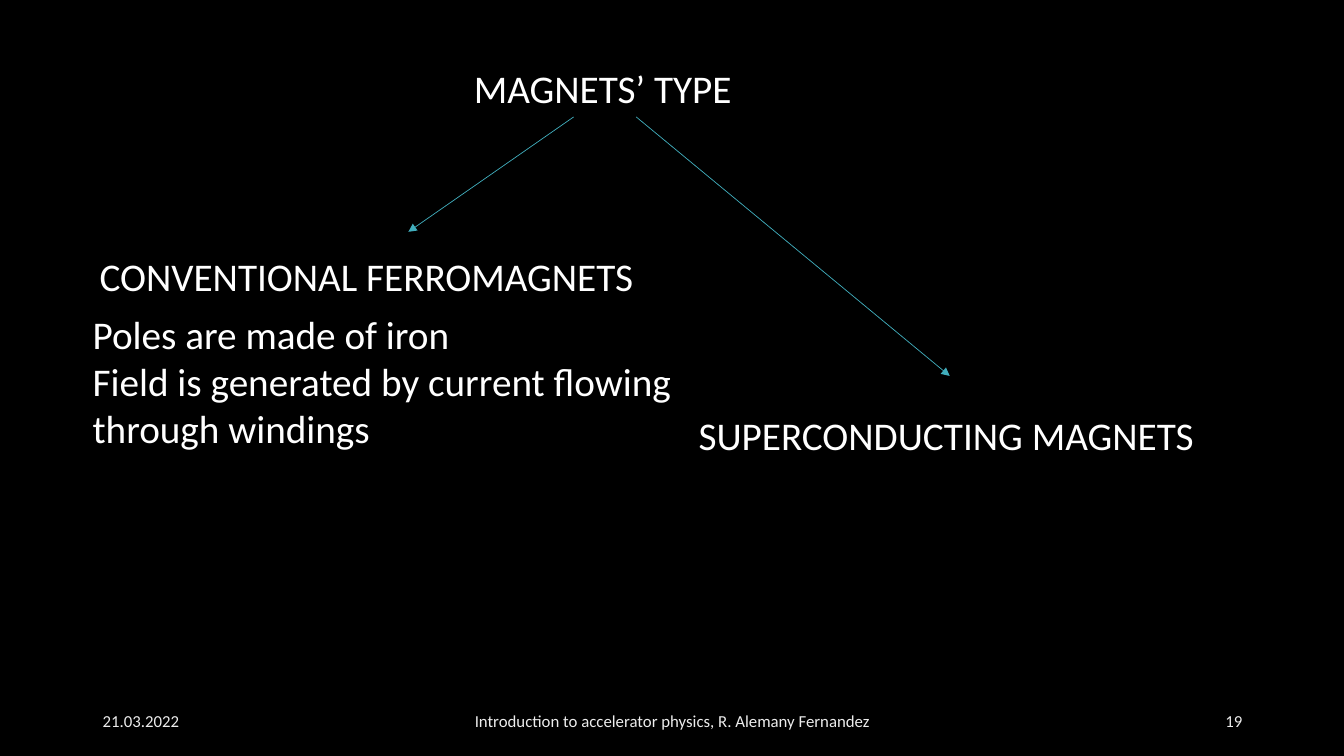
from dataclasses import dataclass

from lxml.etree import SubElement
from pptx import Presentation
from pptx.dml.color import RGBColor
from pptx.enum.shapes import MSO_CONNECTOR
from pptx.enum.text import MSO_ANCHOR, MSO_AUTO_SIZE, PP_ALIGN
from pptx.oxml.ns import qn
from pptx.shapes.base import BaseShape
from pptx.slide import Slide
from pptx.util import Inches, Pt


@dataclass(frozen=True)
class Theme:
    font: str = "Calibri"
    background: RGBColor = RGBColor(0, 0, 0)
    text: RGBColor = RGBColor(0xFF, 0xFF, 0xFF)
    footer: RGBColor = RGBColor(0xED, 0xED, 0xED)
    arrow: RGBColor = RGBColor(0x41, 0xAE, 0xBD)
    body_size: int = 28
    footer_size: int = 12
    arrow_width: float = 0.5


@dataclass(frozen=True)
class Label:
    lines: tuple[str, ...]
    left: float
    top: float
    width: float
    height: float
    wrap: bool = False


@dataclass(frozen=True)
class Footer:
    text: str
    left: float
    width: float
    align: PP_ALIGN


@dataclass(frozen=True)
class Arrow:
    start: tuple[float, float]
    end: tuple[float, float]


THEME = Theme()

TITLE = Label(("MAGNETS’ TYPE",), 4.6, 0.59, 2.98, 0.57)
LABELS = (
    Label(("CONVENTIONAL FERROMAGNETS",), 0.89, 2.45, 6.05, 0.57),
    Label(("SUPERCONDUCTING MAGNETS",), 6.83, 4.03, 5.59, 0.57),
    Label(
        (
            "Poles are made of iron",
            "Field is generated by current flowing through windings",
        ),
        0.82, 3.03, 6.45, 1.51, wrap=True,
    ),
)
ARROWS = (
    Arrow((5.69, 1.16), (4.05, 2.3)),
    Arrow((6.31, 1.16), (9.42, 3.73)),
)
FOOTER_TOP, FOOTER_HEIGHT = 6.95, 0.4
FOOTERS = (
    Footer("21.03.2022", 0.92, 3, PP_ALIGN.LEFT),
    Footer("Introduction to accelerator physics, R. Alemany Fernandez",
           4.42, 4.5, PP_ALIGN.CENTER),
    Footer("19", 9.42, 3, PP_ALIGN.RIGHT),
)


def write_lines(sp: BaseShape, lines: tuple[str, ...], size: int,
                color: RGBColor, align: PP_ALIGN = PP_ALIGN.LEFT) -> None:
    tf = sp.text_frame
    tf.text = "\n".join(lines)
    for p in tf.paragraphs:
        p.alignment = align
        p.font.name = THEME.font
        p.font.size = Pt(size)
        p.font.color.rgb = color


def format_label(sp: BaseShape, label: Label) -> None:
    sp.left, sp.top = Inches(label.left), Inches(label.top)
    sp.width, sp.height = Inches(label.width), Inches(label.height)
    write_lines(sp, label.lines, THEME.body_size, THEME.text)
    tf = sp.text_frame
    tf.word_wrap = label.wrap
    tf.auto_size = MSO_AUTO_SIZE.SHAPE_TO_FIT_TEXT
    tf.vertical_anchor = MSO_ANCHOR.TOP


def add_label(s: Slide, label: Label) -> None:
    format_label(s.shapes.add_textbox(0, 0, 0, 0), label)


def add_footer(s: Slide, footer: Footer) -> None:
    sp = s.shapes.add_textbox(Inches(footer.left), Inches(FOOTER_TOP),
                              Inches(footer.width), Inches(FOOTER_HEIGHT))
    write_lines(sp, (footer.text,), THEME.footer_size, THEME.footer, footer.align)
    sp.text_frame.word_wrap = True
    sp.text_frame.vertical_anchor = MSO_ANCHOR.MIDDLE


def add_arrow(s: Slide, arrow: Arrow) -> None:
    points = (Inches(v) for v in arrow.start + arrow.end)
    sp = s.shapes.add_connector(MSO_CONNECTOR.STRAIGHT, *points)
    sp.line.color.rgb = THEME.arrow
    sp.line.width = Pt(THEME.arrow_width)
    SubElement(sp.line._get_or_add_ln(), qn("a:tailEnd"), type="triangle")
    SubElement(sp._element.spPr, qn("a:effectLst"))


def main() -> None:
    prs = Presentation()
    prs.slide_width, prs.slide_height = Inches(13.33), Inches(7.5)
    s = prs.slides.add_slide(prs.slide_layouts.get_by_name("Title Only"))
    s.background.fill.solid()
    s.background.fill.fore_color.rgb = THEME.background

    format_label(s.shapes.title, TITLE)
    for footer in FOOTERS:
        add_footer(s, footer)
    for arrow in ARROWS:
        add_arrow(s, arrow)
    for label in LABELS:
        add_label(s, label)
    prs.save("out.pptx")


if __name__ == "__main__":
    main()
